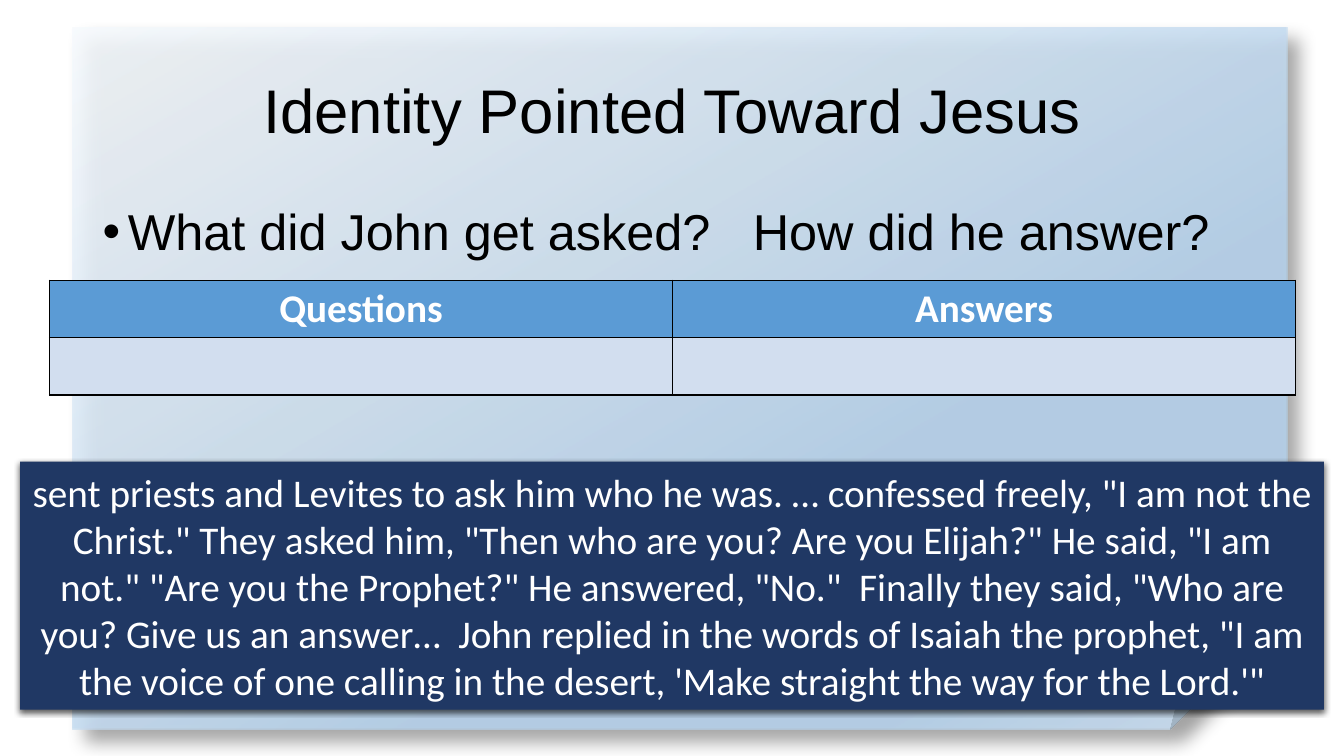
from pptx import Presentation
from pptx.dml.color import RGBColor
from pptx.enum.shapes import MSO_SHAPE as Shape
from pptx.enum.text import MSO_ANCHOR as Anchor, PP_ALIGN as Align
from pptx.oxml import parse_xml
from pptx.oxml.ns import nsdecls
from pptx.util import Inches, Pt

TITLE = "Identity Pointed Toward Jesus"
ASKED, GAP, ANSWER = "What did John get asked?", " ", "How did he answer?"
ROWS = [("Questions", "Answers"), ("", "")]
VERSE = (
    "sent priests and Levites to ask him who he was. … confessed freely, "
    '"I am not the Christ." They asked him, "Then who are you? Are you Elijah?" '
    'He said, "I am not." "Are you the Prophet?" He answered, "No."  Finally they '
    'said, "Who are you? Give us an answer…  John replied in the words of Isaiah '
    "the prophet, \"I am the voice of one calling in the desert, "
    "'Make straight the way for the Lord.'\""
)
COLORS = {
    "black": "000000", "white": "FFFFFF", "navy": "203864",
    "head": "5B9BD5", "body": "D2DEEF",
}
PAPER = [(0, "F7FAFD"), (64, "B5D2EC"), (83, "B5D2EC"), (100, "CEE1F2")]
OPACITY, ANGLE = 87, 60
PLACES = {
    "paper": (0.72, 0.27, 12.05, 6.97),
    "title": (0.92, 0.4, 11.5, 1.45),
    "prompt": (0.92, 2, 11.5, 0.75),
    "verse": (0.2, 4.58, 12.93, 2.46),
    "table": (0.49, 2.78, 12.36, 1.14),
}


def place(name):
    return [Inches(n) for n in PLACES[name]]


def rgb(name):
    return RGBColor.from_string(COLORS[name])


def xml(tag, attrs="", inner=""):
    return parse_xml(f"<a:{tag} {nsdecls('a')} {attrs}>{inner}</a:{tag}>")


def style(para, size, face, color, bold=False):
    for run in para.runs:
        font = run.font
        font.size, font.name, font.bold = Pt(size), face, bold
        font.color.rgb = rgb(color)


def add_box(slide, name, kind, alpha, blur, dist, angle):
    """Add an unlined shape with an outer shadow."""
    box = slide.shapes.add_shape(kind, *place(name))
    box.line.fill.background()
    box.shadow.inherit = False
    effects = box._element.spPr.find(xml("effectLst").tag)
    effects.append(xml(
        "outerShdw",
        f'blurRad="{Pt(blur)}" dist="{Pt(dist)}" dir="{angle * 60000}" '
        'algn="tl" rotWithShape="0"',
        f'<a:srgbClr val="{COLORS["black"]}"><a:alpha val="{alpha * 1000}"/></a:srgbClr>',
    ))
    return box


def add_paper(slide):
    box = add_box(slide, "paper", Shape.FOLDED_CORNER, 40, 13, 13, 45)
    stops = "".join(
        f'<a:gs pos="{pos * 1000}"><a:srgbClr val="{color}">'
        f'<a:alpha val="{OPACITY * 1000}"/></a:srgbClr></a:gs>'
        for pos, color in PAPER
    )
    fill = xml("gradFill", 'rotWithShape="1"',
               f'<a:gsLst>{stops}</a:gsLst><a:lin ang="{ANGLE * 60000}" scaled="0"/>')
    box._element.spPr.insert(2, fill)


def add_text(slide, name, anchor):
    frame = slide.shapes.add_textbox(*place(name)).text_frame
    frame.word_wrap, frame.vertical_anchor = True, anchor
    para = frame.paragraphs[0]
    para.line_spacing = 0.9
    return para


def add_prompt(slide):
    para = add_text(slide, "prompt", Anchor.TOP)
    props = para._p.get_or_add_pPr()
    props.set("marL", str(Inches(0.25)))
    props.set("indent", str(Inches(-0.25)))
    props.append(xml("buFont", 'typeface="Arial"'))
    props.append(xml("buChar", 'char="•"'))
    for part in (ASKED, GAP, ANSWER):
        para.add_run().text = part
    style(para, 36, "Arial", "black")
    # Widen the one space between the two questions by 20 points.
    para.runs[1]._r.get_or_add_rPr().set("spc", "2000")


def add_verse(slide):
    box = add_box(slide, "verse", Shape.RECTANGLE, 63, 4.5, 1.5, 90)
    box.fill.solid()
    box.fill.fore_color.rgb = rgb("navy")
    frame = box.text_frame
    frame.word_wrap, frame.vertical_anchor = True, Anchor.MIDDLE
    frame.text = VERSE
    para = frame.paragraphs[0]
    para.alignment = Align.CENTER
    style(para, 28, "Calibri", "white")


def add_border(cell):
    props = cell._tc.get_or_add_tcPr()
    line = f'<a:solidFill><a:srgbClr val="{COLORS["black"]}"/></a:solidFill>'
    for spot, side in enumerate("LRTB"):
        props.insert(spot, xml(f"ln{side}", f'w="{Pt(1)}"', line))


def add_grid(slide):
    table = slide.shapes.add_table(len(ROWS), len(ROWS[0]), *place("table")).table
    for r, row in enumerate(ROWS):
        for c, label in enumerate(row):
            cell = table.cell(r, c)
            cell.fill.solid()
            cell.fill.fore_color.rgb = rgb("body" if r else "head")
            add_border(cell)
            cell.text_frame.text = label
            para = cell.text_frame.paragraphs[0]
            para.alignment = Align.CENTER
            style(para, 28, "Calibri", "white", bold=True)


def main():
    deck = Presentation()
    deck.slide_width, deck.slide_height = Inches(13.33), Inches(7.5)
    slide = deck.slides.add_slide(deck.slide_layouts[6])
    add_paper(slide)
    title = add_text(slide, "title", Anchor.MIDDLE)
    title.text = TITLE
    title.alignment = Align.CENTER
    style(title, 44, "Arial", "black")
    add_prompt(slide)
    add_verse(slide)
    add_grid(slide)
    deck.save("out.pptx")


if __name__ == "__main__":
    main()
